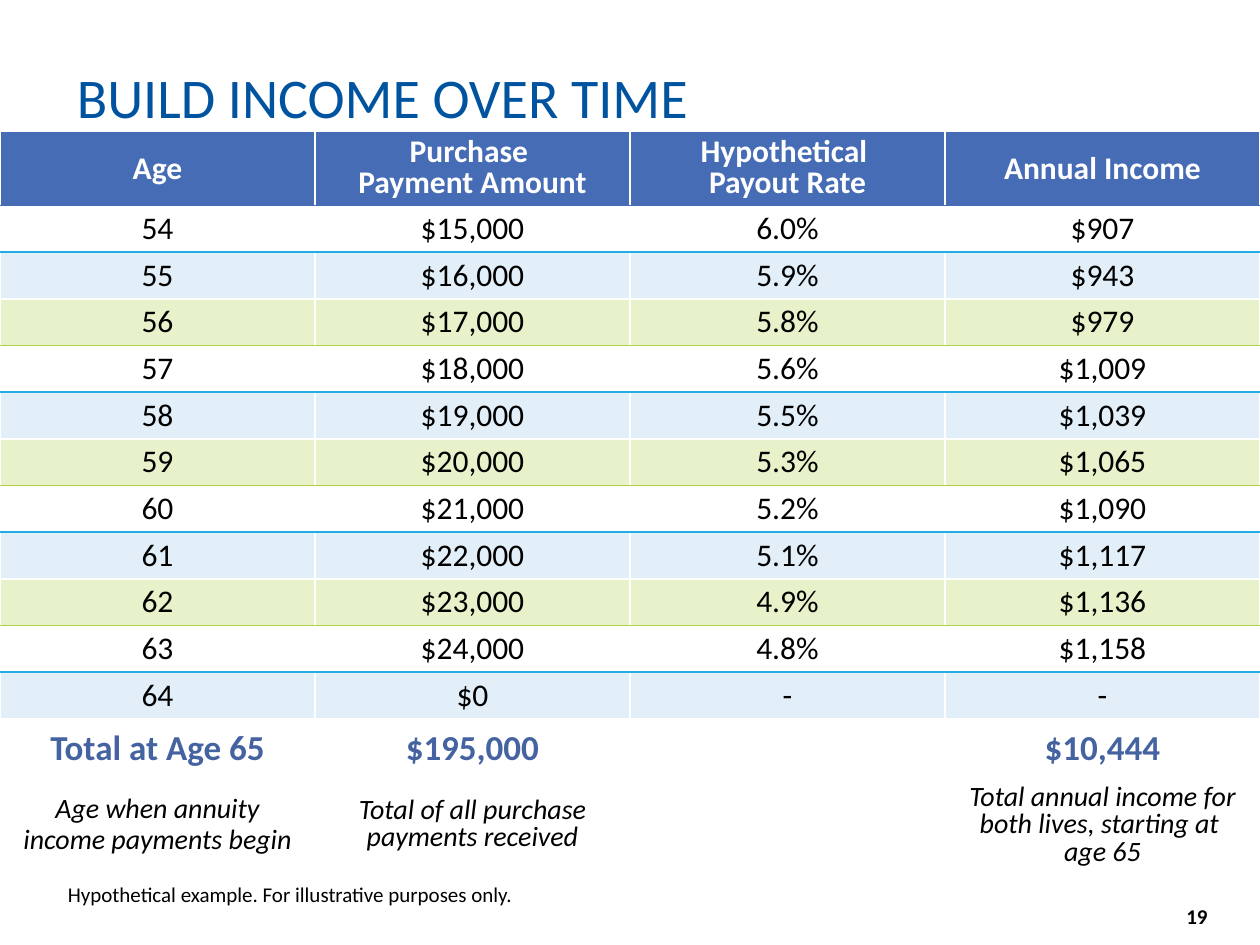
from lxml.etree import SubElement
from pptx import Presentation
from pptx.dml.color import RGBColor
from pptx.enum.text import MSO_ANCHOR as ANCHOR, MSO_AUTO_SIZE as AUTO, PP_ALIGN as ALIGN
from pptx.oxml.ns import qn
from pptx.util import Inches, Pt

FONT = "Calibri"
BLACK = RGBColor(0x00, 0x00, 0x00)
WHITE = RGBColor(0xFF, 0xFF, 0xFF)
TITLE_BLUE = RGBColor(0x00, 0x53, 0x9F)
HEADER_BLUE = RGBColor(0x45, 0x6C, 0xB4)
TOTAL_BLUE = RGBColor(0x44, 0x63, 0xA0)
PALE_BLUE = RGBColor(0xE2, 0xEF, 0xF9)
PALE_GREEN = RGBColor(0xE8, 0xF2, 0xCA)
LINE_BLUE = RGBColor(0x22, 0xAD, 0xE5)
LINE_GREEN = RGBColor(0xB0, 0xD2, 0x3F)

HEADERS = ["Age", "Purchase \vPayment Amount", "Hypothetical \vPayout Rate", "Annual Income"]
INCOME = [
    ("54", "$15,000", "6.0%", "$907"),
    ("55", "$16,000", "5.9%", "$943"),
    ("56", "$17,000", "5.8%", "$979"),
    ("57", "$18,000", "5.6%", "$1,009"),
    ("58", "$19,000", "5.5%", "$1,039"),
    ("59", "$20,000", "5.3%", "$1,065"),
    ("60", "$21,000", "5.2%", "$1,090"),
    ("61", "$22,000", "5.1%", "$1,117"),
    ("62", "$23,000", "4.9%", "$1,136"),
    ("63", "$24,000", "4.8%", "$1,158"),
    ("64", "$0", "-", "-"),
]
TOTALS = ["Total at Age 65", "$195,000", "", "$10,444"]
NOTES = [
    "Age when annuity income payments begin",
    "Total of all purchase\npayments received",
    "",
    "Total annual income for both lives, starting at \nage 65",
]
# Each band: fill, colour and width of the line below it
BANDS = [(WHITE, (LINE_BLUE, 1)), (PALE_BLUE, (WHITE, 1.5)), (PALE_GREEN, (LINE_GREEN, 0.75))]
GRID = (WHITE, 1.5)
HEADER_EDGE = (HEADER_BLUE, 1)
HEADER_H, ROW_H, TOTAL_H, NOTE_H = 0.58, 0.37, 0.47, 0.7


def set_text(tf, text, size, color, bold=False, italic=False, align=ALIGN.LEFT, spacing=1.0):
    tf.text = text
    for p in tf.paragraphs:
        p.alignment = align
        p.line_spacing = spacing
        for r in p.runs:
            font = r.font
            font.name, font.size, font.color.rgb = FONT, Pt(size), color
            font.bold, font.italic = bold, italic


def add_title(s, text):
    sp = s.shapes.title
    sp.left, sp.top, sp.width, sp.height = (Inches(v) for v in (0.51, 0.5, 9, 0.59))
    tf = sp.text_frame
    tf.auto_size = AUTO.NONE
    tf.vertical_anchor = ANCHOR.MIDDLE
    set_text(tf, text, 32, TITLE_BLUE, spacing=0.9)


def add_text(s, box, text, **style):
    tf = s.shapes.add_textbox(*(Inches(v) for v in box)).text_frame
    tf.word_wrap = True
    set_text(tf, text, 12, BLACK, **style)
    return tf


def set_borders(cell, **edges):
    """Draw the edges L, R, T and B, each given as (colour, points)."""
    tcPr = cell._tc.get_or_add_tcPr()
    for side in "LRTB":
        if side in edges:
            color, width = edges[side]
            ln = SubElement(tcPr, qn(f"a:ln{side}"), w=str(Pt(width)))
            fill = SubElement(ln, qn("a:solidFill"))
            SubElement(fill, qn("a:srgbClr"), val=str(color))


def fill_row(table, row, height, texts, fill, top, bottom, size, color, spacings, **style):
    table.rows[row].height = Inches(height)
    last = len(texts) - 1
    for col, (text, spacing) in enumerate(zip(texts, spacings)):
        cell = table.cell(row, col)
        edges = {"T": top, "B": bottom}
        if col > 0:
            edges["L"] = GRID
        if col < last:
            edges["R"] = GRID
        set_borders(cell, **edges)
        cell.fill.solid()
        cell.fill.fore_color.rgb = fill
        cell.vertical_anchor = ANCHOR.MIDDLE
        if text:
            set_text(cell.text_frame, text, size, color, align=ALIGN.CENTER,
                     spacing=spacing, **style)


def add_income_table(s, width):
    cols, rows = len(HEADERS), len(INCOME) + 3
    height = HEADER_H + ROW_H * len(INCOME) + TOTAL_H + NOTE_H
    table = s.shapes.add_table(rows, cols, 0, Inches(1.05), width, Inches(height)).table
    table.first_row = table.horz_banding = False

    fill_row(table, 0, HEADER_H, HEADERS, HEADER_BLUE, HEADER_EDGE, HEADER_EDGE,
             18, WHITE, [1, 0.8, 0.8, 1], bold=True)
    for cell in table.rows[0].cells:
        cell.margin_left = cell.margin_right = cell.margin_top = cell.margin_bottom = 0

    line = HEADER_EDGE
    for i, texts in enumerate(INCOME):
        fill, below = BANDS[i % len(BANDS)]
        fill_row(table, i + 1, ROW_H, texts, fill, line, below, 18, BLACK, [0.9] * cols)
        line = below

    fill_row(table, rows - 2, TOTAL_H, TOTALS, WHITE, GRID, GRID,
             20, TOTAL_BLUE, [0.9] * cols, bold=True)
    fill_row(table, rows - 1, NOTE_H, NOTES, WHITE, GRID, GRID,
             16, BLACK, [0.9, 0.8, 0.8, 0.8], italic=True)


def main():
    prs = Presentation()
    prs.slide_width, prs.slide_height = Inches(10), Inches(7.5)
    s = prs.slides.add_slide(prs.slide_layouts[5])
    add_title(s, "BUILD INCOME OVER TIME")
    number = add_text(s, (9.1, 7.1, 0.8, 0.3), "19", bold=True, align=ALIGN.CENTER)
    number.vertical_anchor = ANCHOR.MIDDLE
    number.margin_bottom = 0
    add_income_table(s, prs.slide_width)
    add_text(s, (0.44, 6.95, 3.81, 0.3), "Hypothetical example. For illustrative purposes only.")
    prs.save("out.pptx")


if __name__ == "__main__":
    main()
